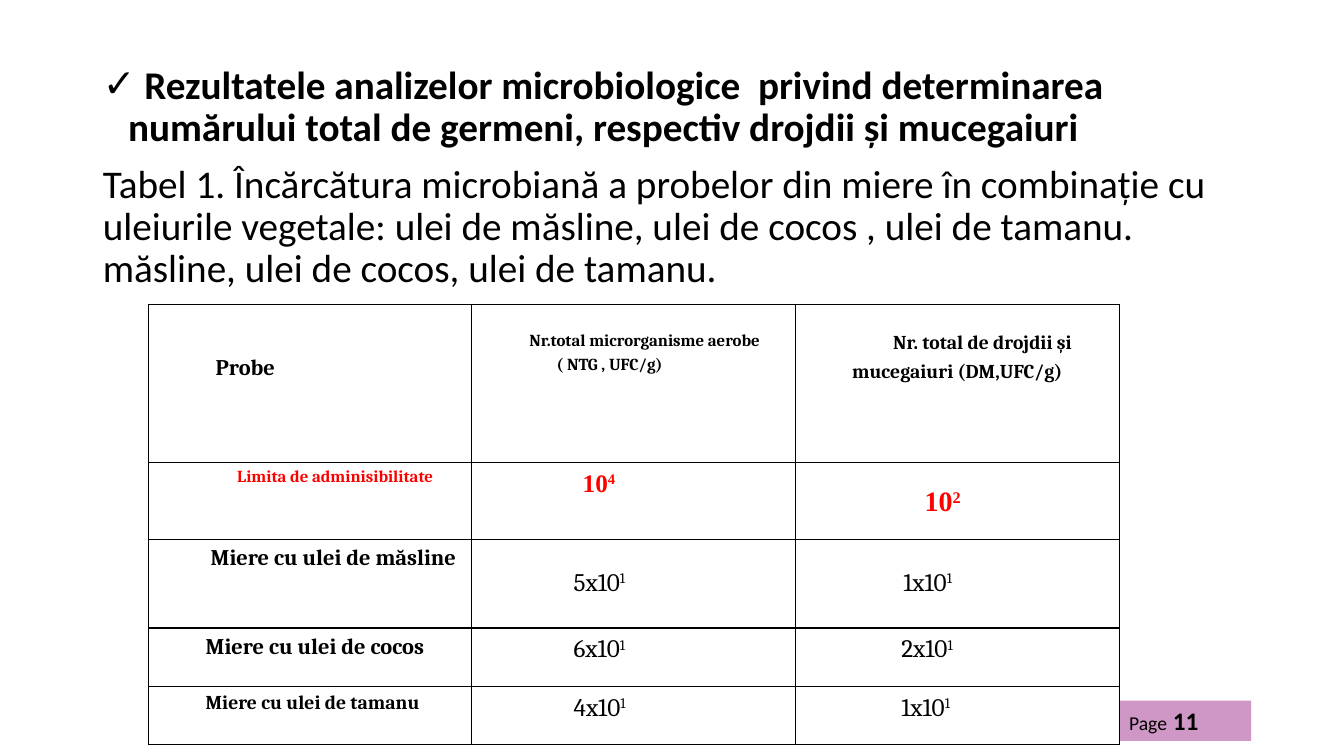
from lxml.etree import SubElement
from pptx import Presentation
from pptx.dml.color import RGBColor
from pptx.enum.shapes import MSO_SHAPE
from pptx.enum.text import MSO_ANCHOR, MSO_AUTO_SIZE, PP_ALIGN
from pptx.oxml.ns import qn
from pptx.util import Inches, Pt

BLACK = RGBColor(0, 0, 0)
RED = RGBColor(255, 0, 0)
ORCHID = RGBColor(0x9F, 0x31, 0x8D)

HEADING = (" Rezultatele analizelor microbiologice  privind determinarea "
           "numărului total de germeni, respectiv drojdii și mucegaiuri")
CAPTION = ("Tabel 1. Încărcătura microbiană a probelor din miere în combinație cu "
           "uleiurile vegetale: ulei de măsline, ulei de cocos , ulei de tamanu. "
           "măsline, ulei de cocos, ulei de tamanu.")


class ResultsSlide:
    body_font = "Calibri"
    table_font = "Cambria"
    limit_font = "Times New Roman"

    def __init__(self, deck):
        self.slide = deck.slides.add_slide(deck.slide_layouts[1])
        title = self.slide.shapes.title
        title.element.getparent().remove(title.element)

    def style(self, font, name, size, bold=False, color=BLACK):
        font.name = name
        font.size = Pt(size)
        font.bold = bold
        font.color.rgb = color

    def indent(self, paragraph, first_line, left=0):
        properties = paragraph._p.get_or_add_pPr()
        properties.set("marL", str(Inches(left)))
        properties.set("indent", str(Inches(first_line)))
        return properties

    def body(self, left, top, width, height, heading, caption):
        holder = self.slide.placeholders[1]
        holder.left, holder.top = Inches(left), Inches(top)
        holder.width, holder.height = Inches(width), Inches(height)
        frame = holder.text_frame
        frame.auto_size = MSO_AUTO_SIZE.NONE
        frame.vertical_anchor = MSO_ANCHOR.TOP
        first, second = frame.paragraphs[0], frame.add_paragraph()
        first.text, second.text = heading, caption
        first.space_before, second.space_before = Pt(0), Pt(10)
        first.line_spacing = second.line_spacing = 0.9
        SubElement(self.indent(first, -0.25, 0.25), qn("a:buChar"), char="✓")
        SubElement(self.indent(second, 0), qn("a:buNone"))
        self.style(first.font, self.body_font, 28, True)
        self.style(second.font, self.body_font, 28)

    def page_tag(self, left, top, width, height, label, number):
        tag = self.slide.shapes.add_shape(
            MSO_SHAPE.RECTANGLE, Inches(left), Inches(top), Inches(width), Inches(height))
        tag.shadow.inherit = False
        tag.line.fill.background()
        tag.fill.solid()
        tag.fill.fore_color.rgb = ORCHID
        SubElement(tag.fill._xPr.find(".//" + qn("a:srgbClr")), qn("a:alpha"), val="50000")
        tag.text_frame.vertical_anchor = MSO_ANCHOR.MIDDLE
        paragraph = tag.text_frame.paragraphs[0]
        paragraph.alignment = PP_ALIGN.LEFT
        for text, size, bold in ((label, 14, False), (number, 18, True)):
            run = paragraph.add_run()
            run.text = text
            self.style(run.font, self.body_font, size, bold)

    def borders(self, cell):
        properties = cell._tc.get_or_add_tcPr()
        for position, side in enumerate(("lnL", "lnR", "lnT", "lnB")):
            line = SubElement(properties, qn("a:" + side), w=str(Pt(1)))
            fill = SubElement(line, qn("a:solidFill"))
            SubElement(fill, qn("a:srgbClr"), val=str(BLACK))
            properties.insert(position, line)

    def fill_cell(self, cell, content):
        cell.fill.background()
        self.borders(cell)
        cell.margin_left = cell.margin_right = Inches(0.07)
        cell.margin_top, cell.margin_bottom = Inches(content["top"]), 0
        cell.vertical_anchor = MSO_ANCHOR.TOP
        frame = cell.text_frame
        for index, (text, power, first_line) in enumerate(content["lines"]):
            paragraph = frame.add_paragraph() if index else frame.paragraphs[0]
            paragraph.alignment = content["align"]
            paragraph.line_spacing = 1.25
            self.indent(paragraph, first_line)
            paragraph.add_run().text = text
            if power:
                exponent = paragraph.add_run()
                exponent.text = power
                exponent._r.get_or_add_rPr().set("baseline", "30000")
            self.style(paragraph.font, content["font"], content["size"],
                       content["bold"], content["color"])

    def table(self, left, top, column_width, row_heights, rows):
        columns = len(rows[0])
        grid = self.slide.shapes.add_table(
            len(rows), columns, Inches(left), Inches(top),
            Inches(column_width * columns), Inches(sum(row_heights))).table
        grid.first_row = grid.horz_banding = False
        for column in grid.columns:
            column.width = Inches(column_width)
        for row, height, contents in zip(grid.rows, row_heights, rows):
            row.height = Inches(height)
            for cell, content in zip(row.cells, contents):
                self.fill_cell(cell, content)


def label(size, *lines, top=0, align=PP_ALIGN.LEFT, color=BLACK):
    return dict(lines=[(text, "", first_line) for text, first_line in lines], size=size,
                top=top, align=align, color=color, bold=True, font=ResultsSlide.table_font)


def limit(power, first_line, size, top=0):
    return dict(lines=[("10", power, first_line)], size=size, top=top, align=PP_ALIGN.LEFT,
                color=RED, bold=True, font=ResultsSlide.limit_font)


def count(factor, first_line, top=0):
    return dict(lines=[(f"{factor}x10", "1", first_line)], size=18, top=top,
                align=PP_ALIGN.LEFT, color=BLACK, bold=False, font=ResultsSlide.table_font)


def main():
    deck = Presentation()
    deck.slide_width, deck.slide_height = Inches(13.33), Inches(7.5)
    results = ResultsSlide(deck)
    results.body(0.92, 0.6, 11.5, 4.76, HEADING, CAPTION)
    results.page_tag(11.1, 6.95, 1.31, 0.4, "Page", " 11")
    results.table(1.47, 3.02, 3.21, (1.57, 0.76, 0.88, 0.58, 0.58), [
        [label(16, ("Probe", 0.6), top=0.44),
         label(12, ("Nr.total microrganisme aerobe", 0.5), ("( NTG , UFC/g)", 0.77), top=0.22),
         label(14, ("Nr. total de drojdii și mucegaiuri (DM,UFC/g)", 0.5), top=0.22,
               align=PP_ALIGN.CENTER)],
        [label(12, ("Limita de adminisibilitate", 0.5), align=PP_ALIGN.CENTER, color=RED),
         limit("4", 1.03, 18), limit("2", 1.21, 20, top=0.16)],
        [label(16, ("Miere cu ulei de măsline", 0.55)),
         count(5, 0.94, top=0.22), count(1, 1, top=0.22)],
        [label(16, ("Miere cu ulei de cocos", 0.5)), count(6, 0.94), count(2, 0.98)],
        [label(14, ("Miere cu ulei de tamanu", 0.5)), count(4, 0.94), count(1, 0.98)],
    ])
    deck.save("out.pptx")


if __name__ == "__main__":
    main()
